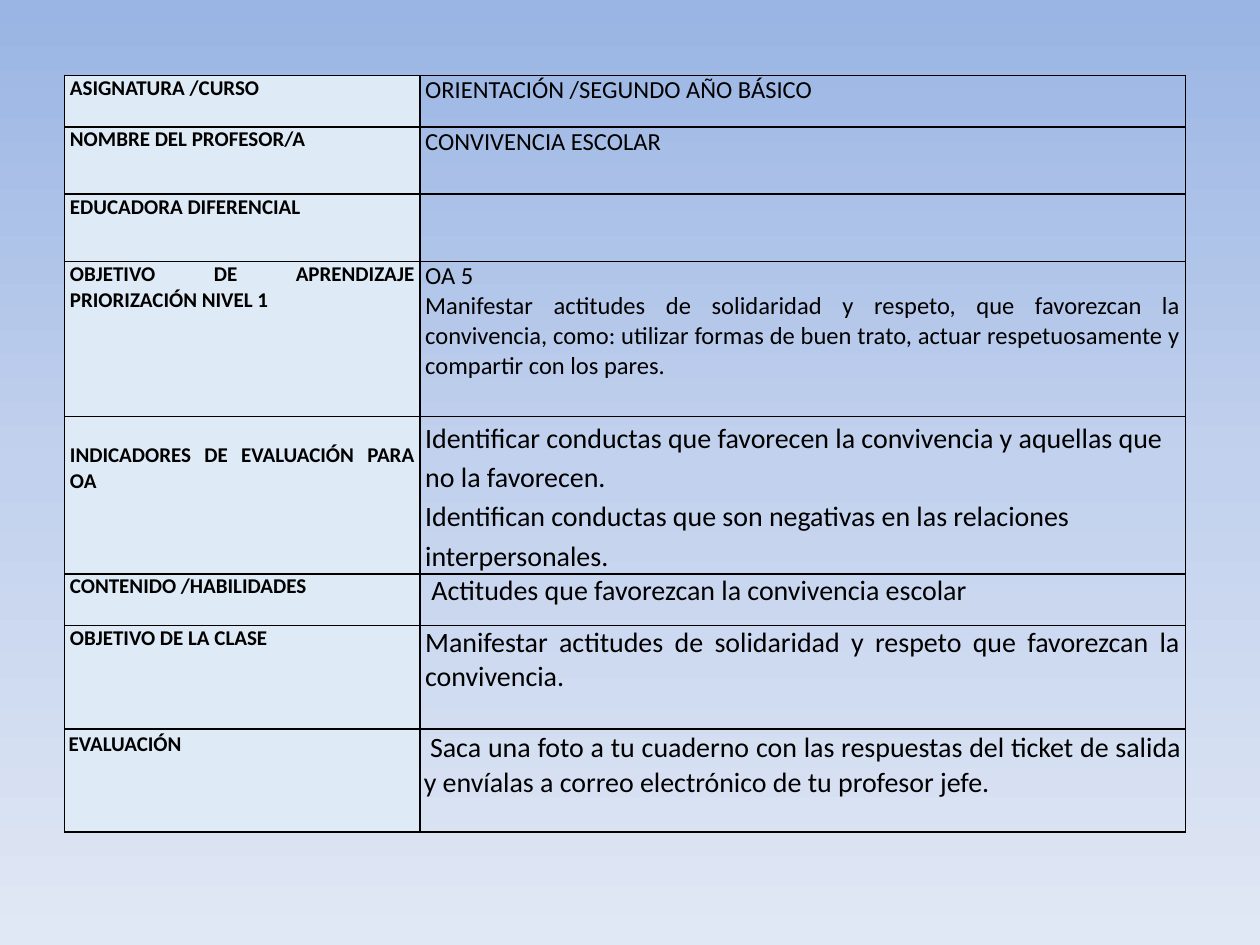
from copy import deepcopy
from dataclasses import dataclass

from lxml import etree
from pptx import Presentation
from pptx.dml.color import RGBColor
from pptx.enum.text import PP_ALIGN
from pptx.oxml.ns import qn
from pptx.util import Pt

JUSTIFY, LEFT = PP_ALIGN.JUSTIFY, PP_ALIGN.LEFT


@dataclass(frozen=True)
class Theme:
    font: str = "Calibri"
    ink: str = "000000"
    label_fill: str = "DEEAF6"
    gradient: tuple = ((0, "9AB5E4"), (0.5, "C2D1ED"), (1, "E1E8F5"))
    label: int = 12
    body: int = 14
    large: int = 16
    border: int = 1


@dataclass
class Row:
    height: float
    label: str
    texts: tuple = ()
    size: int = Theme.large
    align: PP_ALIGN = JUSTIFY
    spacing: float = 1.0
    indent: float = 0
    label_top: float = 0
    margin_x: float = 3
    margin_y: float = 0


class SlideBuilder:
    def __init__(self, slide, theme):
        self.s = slide
        self.theme = theme

    def background(self):
        fill = self.s.background.fill
        fill.gradient()
        fill.gradient_angle = 270
        gs_list = self.s.element.find(".//" + qn("a:gsLst"))
        gs_list.insert(1, deepcopy(gs_list[0]))
        for stop, (position, color) in zip(fill.gradient_stops, self.theme.gradient):
            stop.position = position
            stop.color.rgb = RGBColor.from_string(color)

    def borders(self, cell):
        tc_pr = cell._tc.get_or_add_tcPr()
        for i, side in enumerate(("a:lnL", "a:lnR", "a:lnT", "a:lnB")):
            ln = etree.Element(qn(side), w=str(Pt(self.theme.border)))
            fill = etree.SubElement(ln, qn("a:solidFill"))
            etree.SubElement(fill, qn("a:srgbClr"), val=self.theme.ink)
            tc_pr.insert(i, ln)

    def cell(self, cell, row, texts, size, bold=False, align=JUSTIFY,
             spacing=1.0, indent=0, top=0, fill=None):
        cell.margin_left = cell.margin_right = Pt(row.margin_x)
        cell.margin_top = Pt(row.margin_y + top)
        cell.margin_bottom = Pt(row.margin_y)
        if fill:
            cell.fill.solid()
            cell.fill.fore_color.rgb = RGBColor.from_string(fill)
        else:
            cell.fill.background()
        self.borders(cell)
        tf = cell.text_frame
        for i, text in enumerate(texts):
            p = tf.add_paragraph() if i else tf.paragraphs[0]
            p.text = text
            p.alignment = align
            p.line_spacing = spacing
            if indent:
                p._p.get_or_add_pPr().set("indent", str(Pt(indent)))
            p.font.name = self.theme.font
            p.font.size = Pt(size)
            p.font.bold = bold
            p.font.color.rgb = RGBColor.from_string(self.theme.ink)

    def table(self, left, top, widths, rows):
        height = sum(row.height for row in rows)
        table = self.s.shapes.add_table(
            len(rows), len(widths), Pt(left), Pt(top), Pt(sum(widths)), Pt(height)).table
        table.first_row = table.horz_banding = False
        for column, width in zip(table.columns, widths):
            column.width = Pt(width)
        for i, row in enumerate(rows):
            table.rows[i].height = Pt(row.height)
            self.cell(table.cell(i, 0), row, (row.label,), self.theme.label, bold=True,
                      top=row.label_top, fill=self.theme.label_fill)
            self.cell(table.cell(i, 1), row, row.texts, row.size, align=row.align,
                      spacing=row.spacing, indent=row.indent)


def main():
    theme = Theme()
    prs = Presentation()
    prs.slide_width, prs.slide_height = Pt(720), Pt(540)
    builder = SlideBuilder(prs.slides.add_slide(prs.slide_layouts[6]), theme)
    builder.background()

    # Lesson plan: label, content
    rows = [
        Row(29.5, "ASIGNATURA /CURSO", ("ORIENTACIÓN /SEGUNDO AÑO BÁSICO",), theme.body),
        Row(38.5, "NOMBRE DEL PROFESOR/A", ("CONVIVENCIA ESCOLAR",), theme.body),
        Row(38.5, "EDUCADORA DIFERENCIAL"),
        Row(88.5, "OBJETIVO DE APRENDIZAJE PRIORIZACIÓN NIVEL 1",
            ("OA 5",
             "Manifestar actitudes de solidaridad y respeto, que favorezcan la convivencia, "
             "como: utilizar formas de buen trato, actuar respetuosamente y compartir con "
             "los pares."), theme.body),
        Row(90, "INDICADORES DE EVALUACIÓN PARA OA",
            ("Identificar conductas que favorecen la convivencia y aquellas que no la "
             "favorecen.",
             "Identifican conductas que son negativas en las relaciones interpersonales."),
            align=LEFT, spacing=1.15, label_top=15),
        Row(29.5, "CONTENIDO /HABILIDADES",
            ("Actitudes que favorezcan la convivencia escolar",), indent=3.6),
        Row(59, "OBJETIVO DE LA CLASE",
            ("Manifestar actitudes de solidaridad y respeto que favorezcan la "
             "convivencia.",)),
        Row(59, "EVALUACIÓN",
            ("Saca una foto a tu cuaderno con las respuestas del ticket de salida y "
             "envíalas a correo electrónico de tu profesor jefe.",),
            indent=3.6, margin_x=2.2, margin_y=1.4),
    ]
    builder.table(37, 43, (203, 437.5), rows)
    prs.save("out.pptx")


if __name__ == "__main__":
    main()
